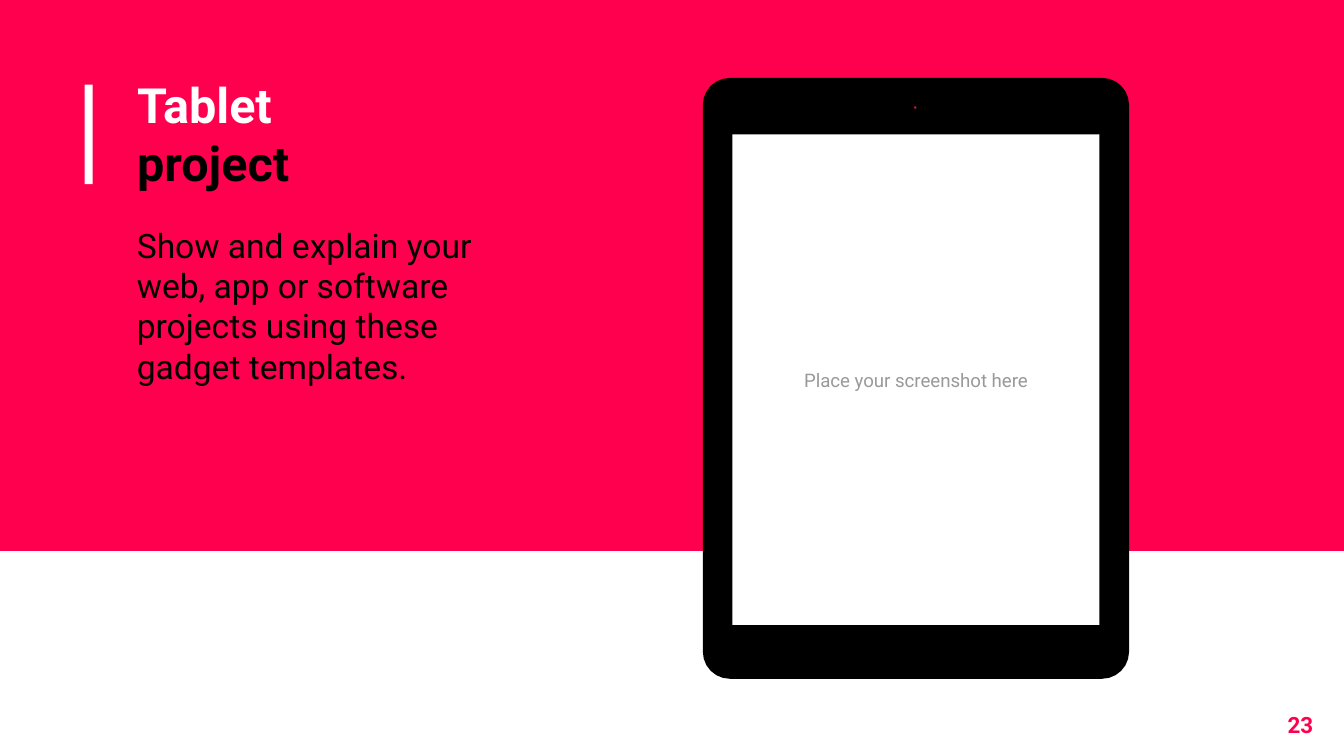
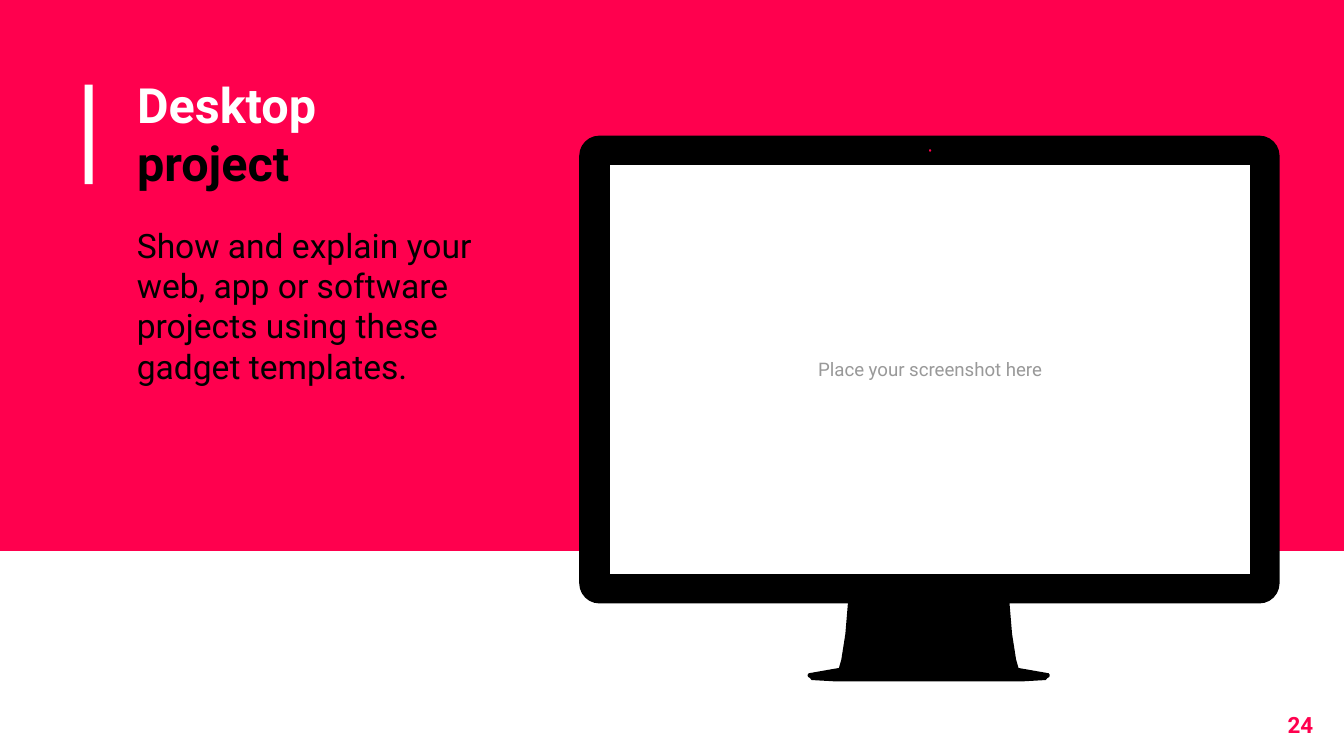
from math import cos, radians, sin

from pptx import Presentation
from pptx.dml.color import RGBColor
from pptx.enum import shapes, text
from pptx.util import Inches, Pt

PINK = RGBColor(0xFF, 0x00, 0x4E)
WHITE = RGBColor(0xFF, 0xFF, 0xFF)
BLACK = RGBColor(0x00, 0x00, 0x00)
GREY = RGBColor(0x99, 0x99, 0x99)

LEFT, MID, RIGHT = text.PP_ALIGN.LEFT, text.PP_ALIGN.CENTER, text.PP_ALIGN.RIGHT
TOP, CENTER = text.MSO_ANCHOR.TOP, text.MSO_ANCHOR.MIDDLE

HEAD = {"size": Pt(26), "bold": True}
BODY = {"size": Pt(18), "bold": False}
HINT = {"size": Pt(10), "bold": False}
PAGE = {"size": Pt(12), "bold": True}

BLURB = ("Show and explain your web, app or software projects "
         "using these gadget templates.")
STAND = [(0.59, 4.48), (0.61, 4.72), (0.64, 4.91), (0.66, 4.98),
         (0.72, 4.99), (0.89, 5.02), (0.89, 5.03), (0.87, 5.04),
         (0.87, 5.05), (0.69, 5.06)]


def write(frame, lines, style, align=LEFT, anchor=TOP):
    attrs = {"word_wrap": True, "auto_size": text.MSO_AUTO_SIZE.NONE,
             "vertical_anchor": anchor}
    for side in ("left", "top", "right", "bottom"):
        attrs["margin_" + side] = Inches(0.1)
    for name, value in attrs.items():
        setattr(frame, name, value)
    for i, (words, color) in enumerate(lines):
        para = frame.add_paragraph() if i else frame.paragraphs[0]
        para.alignment = align
        run = para.add_run()
        run.text = words
        for name, value in {"name": "Roboto", **style}.items():
            setattr(run.font, name, value)
        run.font.color.rgb = color


def block(slide, box, color):
    rect = slide.shapes.add_shape(shapes.MSO_SHAPE.RECTANGLE, *map(Inches, box))
    rect.shadow.inherit = False
    rect.fill.solid()
    rect.fill.fore_color.rgb = color
    rect.line.fill.background()
    return rect


def label(slide, box, lines, style, align=LEFT):
    area = slide.shapes.add_textbox(*map(Inches, box))
    write(area.text_frame, lines, style, align)


def title(slide, word):
    head = slide.shapes.title
    slide.shapes._spTree.append(head._element)
    box = map(Inches, (0.92, 0.46, 3.53, 0.94))
    for name, value in zip(("left", "top", "width", "height"), box):
        setattr(head, name, value)
    write(head.text_frame, [(word, WHITE), ("project", BLACK)], HEAD)


def ring(box, r):
    x, y, w, h = box
    hubs = [(x + w - r, y + h - r), (x + r, y + h - r),
            (x + r, y + r), (x + w - r, y + r)]
    return [(cx + r * cos(radians(a)), cy + r * sin(radians(a)))
            for i, (cx, cy) in enumerate(hubs)
            for a in range(90 * i, 90 * i + 91, 15)]


def dot(x, y):
    return ring((x - 0.02, y - 0.02, 0.04, 0.04), 0.02)


def edges(box):
    x, y, w, h = box
    return [(x, y), (x + w, y), (x + w, y + h), (x, y + h)]


def stand(mid):
    return ([(mid - x, y) for x, y in STAND]
            + [(mid + x, y) for x, y in reversed(STAND)])


def device(slide, loops, screen):
    pen = None
    for loop in loops + [edges(screen)]:
        first, *rest = [(Inches(x), Inches(y)) for x, y in loop]
        if pen is None:
            pen = slide.shapes.build_freeform(*first, scale=1.0)
        else:
            pen.move_to(*first)
        pen.add_line_segments(rest, close=True)
    case = pen.convert_to_shape()
    case.shadow.inherit = False
    case.fill.solid()
    case.fill.fore_color.rgb = BLACK
    case.line.color.rgb = BLACK
    case.line.width = Pt(1.5)
    pane = block(slide, screen, WHITE)
    write(pane.text_frame, [("Place your screenshot here", GREY)],
          HINT, MID, CENTER)


def page(deck, word, number, loops, screen):
    slide = deck.slides.add_slide(deck.slide_layouts[5])
    block(slide, (0, 0, 10, 4.1), PINK)
    block(slide, (0.63, 0.63, 0.06, 0.74), WHITE)
    device(slide, loops, screen)
    title(slide, word)
    label(slide, (0.92, 1.57, 3.26, 3.82), [(BLURB, BLACK)], BODY)
    label(slide, (9.27, 5.19, 0.6, 0.43), [(number, PINK)], PAGE, RIGHT)


def main():
    deck = Presentation()
    deck.slide_width = Inches(10)
    deck.slide_height = deck.slide_width * 9 // 16
    tablet = [ring((5.24, 0.59, 3.15, 4.45), 0.19), dot(6.81, 0.8)]
    desktop = [ring((4.32, 1.02, 5.19, 3.46), 0.14), dot(6.92, 1.12),
               stand(6.91)]
    page(deck, "Tablet", "23", tablet, (5.45, 1, 2.73, 3.65))
    page(deck, "Desktop", "24", desktop, (4.54, 1.23, 4.76, 3.04))
    deck.save("out.pptx")


if __name__ == "__main__":
    main()
